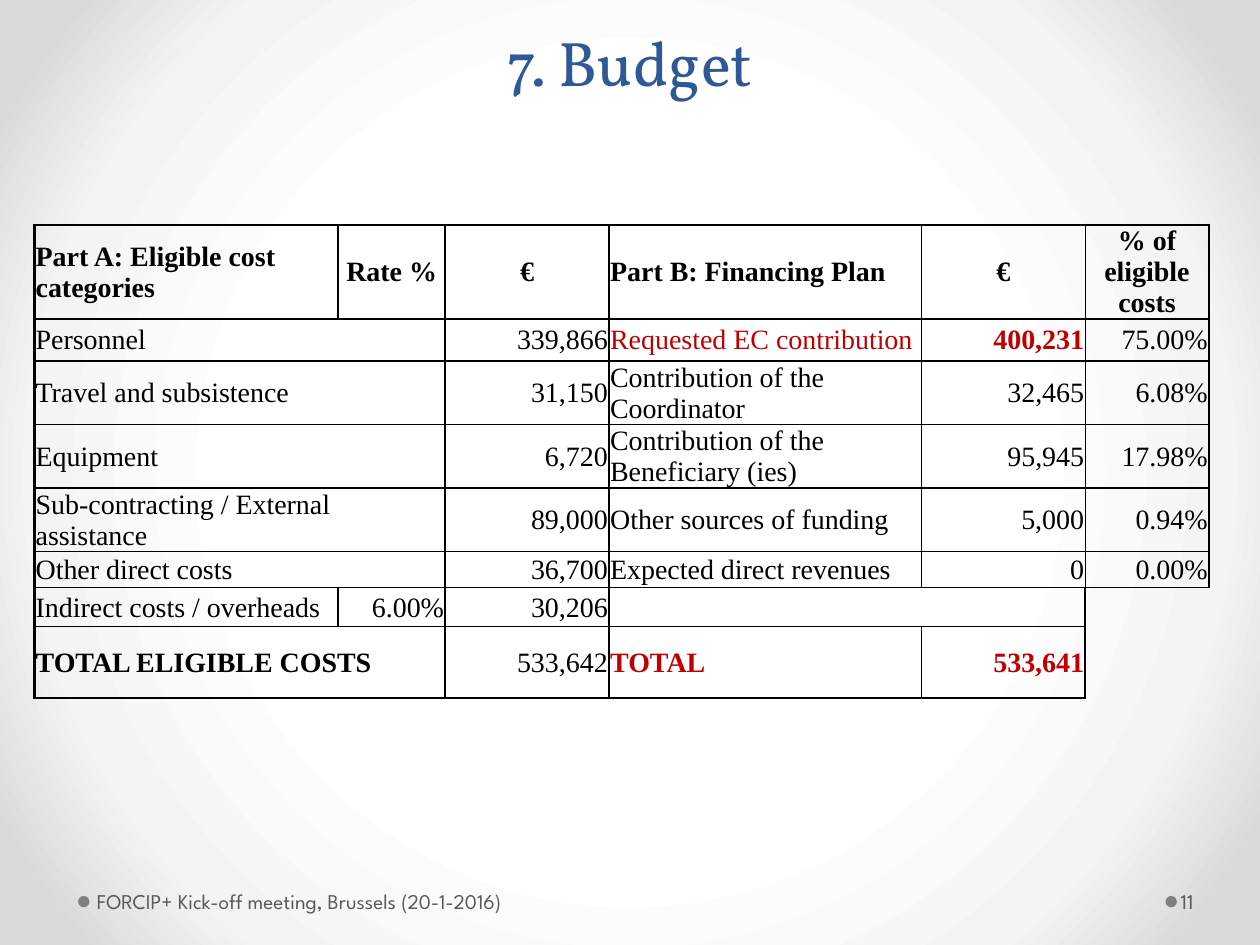
import pptx
import pptx.util
import pptx.dml.color
import pptx.enum.shapes
import pptx.enum.text
import pptx.oxml
import pptx.oxml.ns

Pt = pptx.util.Pt
RGBColor = pptx.dml.color.RGBColor
ALIGN = pptx.enum.text.PP_ALIGN
ANCHOR = pptx.enum.text.MSO_ANCHOR
qn = pptx.oxml.ns.qn
NS = pptx.oxml.ns.nsdecls("a")

BLACK = RGBColor(0x00, 0x00, 0x00)
RED = RGBColor(0xC0, 0x00, 0x00)
BLUE = RGBColor(0x2F, 0x58, 0x97)
GRAY = RGBColor(0x59, 0x59, 0x59)
DOT = RGBColor(0x80, 0x80, 0x80)
STOPS = [(50, RGBColor(0xFF, 0xFF, 0xFF)),
         (76, RGBColor(0xF4, 0xF4, 0xF4)),
         (92, RGBColor(0xDA, 0xDA, 0xDA))]


def style(para, name, size, color, bold=False):
    font = para.font
    font.name, font.size, font.bold = name, Pt(size), bold
    font.color.rgb = color


def label(text, box, pads, anchor):
    frame = slide.shapes.add_textbox(*map(Pt, box)).text_frame
    frame.word_wrap = True
    frame.vertical_anchor = anchor
    frame.margin_left, frame.margin_top, frame.margin_right, frame.margin_bottom = map(Pt, pads)
    frame.text = text
    return frame.paragraphs[0]


deck = pptx.Presentation()
deck.slide_width, deck.slide_height = Pt(720), Pt(540)
slide = deck.slides.add_slide(deck.slide_layouts[6])

slide.background.fill.gradient()
grad = slide.element.find(".//" + qn("a:gradFill"))
for child in list(grad):
    grad.remove(child)
stops = "".join(f'<a:gs pos="{pos * 1000}"><a:srgbClr val="{color}"/></a:gs>' for pos, color in STOPS)
grad.append(pptx.oxml.parse_xml(f"<a:gsLst {NS}>{stops}</a:gsLst>"))
grad.append(pptx.oxml.parse_xml(
    f'<a:path {NS} path="circle"><a:fillToRect l="50000" t="50000" r="50000" b="50000"/></a:path>'))

for left in (666, 44.6):
    dot = slide.shapes.add_shape(pptx.enum.shapes.MSO_SHAPE.OVAL, Pt(left), Pt(512), Pt(6.5), Pt(6.5))
    dot.shadow.inherit = False
    dot.fill.solid()
    dot.fill.fore_color.rgb = DOT
    dot.line.fill.background()

title = label("7. Budget", (36, 0, 648, 60), (7.2, 3.6, 7.2, 3.6), ANCHOR.BOTTOM)
title.alignment = ALIGN.CENTER
title.line_spacing = Pt(58)
style(title, "Vollkorn", 36, BLUE)

for text, left, width, pads in [
    ("FORCIP+ Kick-off meeting, Brussels (20-1-2016)", 51.8, 308, (3.6, 3.6, 7.2, 3.6)),
    ("11", 672.5, 44, (2.2, 3.6, 3.6, 3.6)),
]:
    style(label(text, (left, 500.4, width, 28.8), pads, ANCHOR.MIDDLE), "League Spartan", 12, GRAY)

COLS = [173.5, 61.2, 93.6, 178.6, 93.6, 70.6]
ROWS = [53.8, 24.1, 36.3, 36.3, 36.3, 20.7, 22.3, 40.6]
DATA = [
    ["Part A: Eligible cost categories", "Rate %", "€", "Part B: Financing Plan", "€", "% of eligible costs"],
    ["Personnel", "", "339,866", "Requested EC contribution", "400,231", "75.00%"],
    ["Travel and subsistence", "", "31,150", "Contribution of the Coordinator", "32,465", "6.08%"],
    ["Equipment", "", "6,720", "Contribution of the Beneficiary (ies)", "95,945", "17.98%"],
    ["Sub-contracting / External assistance", "", "89,000", "Other sources of funding", "5,000", "0.94%"],
    ["Other direct costs", "", "36,700", "Expected direct revenues", "0", "0.00%"],
    ["Indirect costs / overheads", "6.00%", "30,206", "", "", ""],
    ["TOTAL ELIGIBLE COSTS", "", "533,642", "TOTAL", "533,641", ""],
]
REDS = {(1, 3), (1, 4), (7, 3), (7, 4)}
BOLDS = {(1, 4), (7, 0), (7, 3), (7, 4)}

table = slide.shapes.add_table(8, 6, Pt(19.7), Pt(128.4), Pt(sum(COLS)), Pt(sum(ROWS))).table
table.first_row = table.horz_banding = False
for col, width in zip(table.columns, COLS):
    col.width = Pt(width)
for row, height in zip(table.rows, ROWS):
    row.height = Pt(height)

for r, line in enumerate(DATA):
    for c, text in enumerate(line):
        cell = table.cell(r, c)
        cell.margin_left = cell.margin_right = cell.margin_top = Pt(0.7)
        cell.margin_bottom = Pt(0)
        cell.vertical_anchor = ANCHOR.MIDDLE
        cell.text = text
        para = cell.text_frame.paragraphs[0]
        para.line_spacing = Pt(17.7)
        if c not in (0, 3):
            para.alignment = ALIGN.RIGHT if r else ALIGN.CENTER
        style(para, "Times New Roman", 16, RED if (r, c) in REDS else BLACK, r == 0 or (r, c) in BOLDS)

        blank = c == 5 and r > 5
        edges = {
            "L": 1.5 if c == 0 or blank else 1,
            "R": 0 if blank else 1.5 if c == 5 or (c == 4 and r > 5) else 1,
            "T": 1.5 if r == 0 else 0 if blank and r == 7 else 1,
            "B": 0 if blank else 1.5 if r == 7 else 1,
        }
        props = cell._tc.get_or_add_tcPr()
        for side, width in edges.items():
            paint = f'<a:solidFill><a:srgbClr val="{BLACK}"/></a:solidFill>' if width else "<a:noFill/>"
            props.append(pptx.oxml.parse_xml(f'<a:ln{side} {NS} w="{Pt(width)}">{paint}</a:ln{side}>'))
        cell.fill.background()

for r, c in [(1, 0), (2, 0), (3, 0), (4, 0), (5, 0), (6, 3), (7, 0)]:
    table.cell(r, c).merge(table.cell(r, c + 1))

deck.save("out.pptx")
